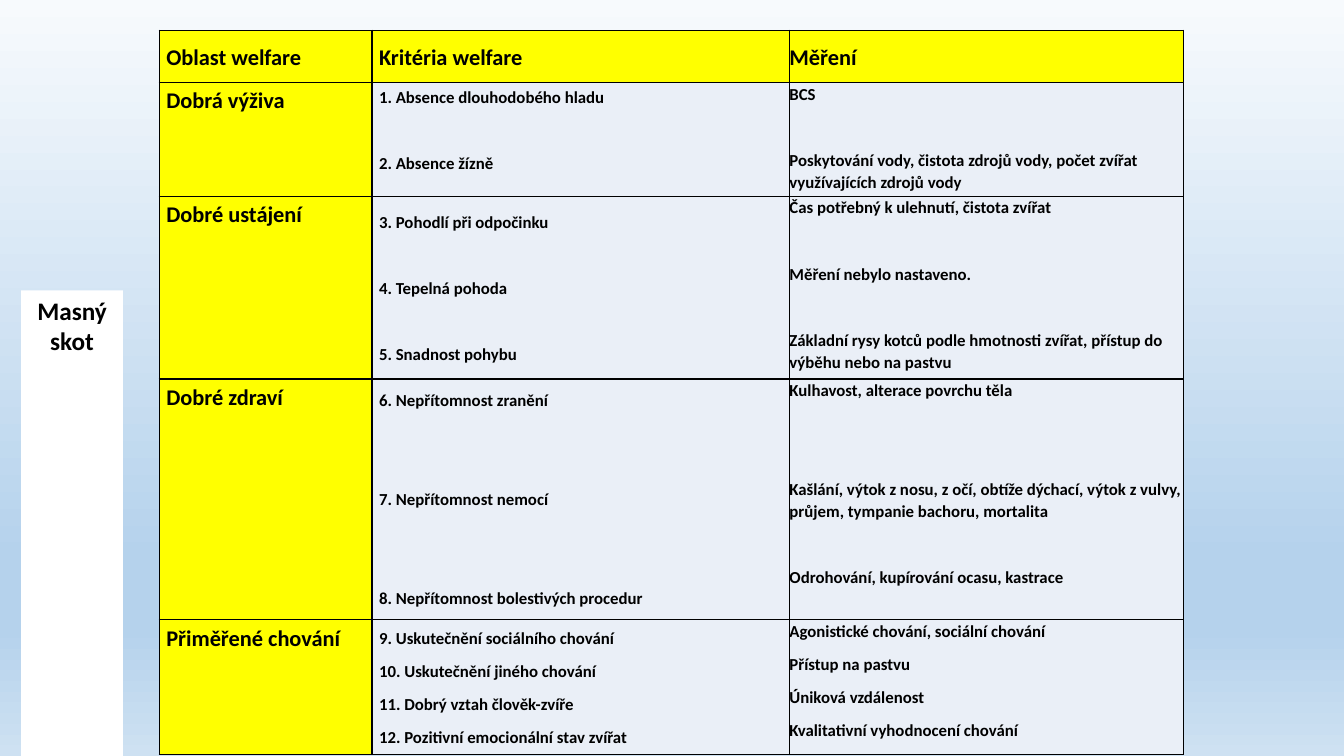
from dataclasses import dataclass

from lxml import etree
from pptx import Presentation
from pptx import util as u
from pptx.dml.color import RGBColor
from pptx.enum import text
from pptx.oxml.ns import qn

FONT = "Calibri"
BLACK = RGBColor(0x00, 0x00, 0x00)
WHITE = RGBColor(0xFF, 0xFF, 0xFF)
YELLOW = RGBColor(0xFF, 0xFF, 0x00)
PALE_BLUE = RGBColor(0xEA, 0xEF, 0xF7)
SKY_TOP = RGBColor(0xF7, 0xFA, 0xFD)
SKY_DEEP = RGBColor(0xB5, 0xD2, 0xEC)
SKY_BOTTOM = RGBColor(0xCE, 0xE1, 0xF2)
SKY = [(0, SKY_TOP), (74, SKY_DEEP), (83, SKY_DEEP), (100, SKY_BOTTOM)]

TOP, MIDDLE = text.MSO_ANCHOR.TOP, text.MSO_ANCHOR.MIDDLE
BASE_GAP = 8  # points after each paragraph
LINE_STEP = 23.6  # points from one 12 pt paragraph to the next
COLUMN_WIDTHS = (2.11, 4.14, 3.91)
HEADER_HEIGHT = 0.52
HEADINGS = ("Oblast welfare", "Kritéria welfare", "Měření")


@dataclass
class Entry:
    wording: str
    skipped_lines: int = 0  # free lines left below the entry


@dataclass
class WelfareArea:
    name: str
    height: float
    criteria: list[Entry]
    measures: list[Entry]
    criteria_anchor: text.MSO_ANCHOR = MIDDLE


AREAS = [
    WelfareArea(
        "Dobrá výživa", 1.13,
        [Entry("1. Absence dlouhodobého hladu", 1), Entry("2. Absence žízně")],
        [Entry("BCS", 1),
         Entry("Poskytování vody, čistota zdrojů vody, počet zvířat využívajících zdrojů vody")],
        TOP,
    ),
    WelfareArea(
        "Dobré ustájení", 1.81,
        [Entry("3. Pohodlí při odpočinku", 1), Entry("4. Tepelná pohoda", 1),
         Entry("5. Snadnost pohybu")],
        [Entry("Čas potřebný k ulehnutí, čistota zvířat", 1),
         Entry("Měření nebylo nastaveno.", 1),
         Entry("Základní rysy kotců podle hmotnosti zvířat, přístup do výběhu nebo na pastvu")],
    ),
    WelfareArea(
        "Dobré zdraví", 2.39,
        [Entry("6. Nepřítomnost zranění", 2), Entry("7. Nepřítomnost nemocí", 2),
         Entry("8. Nepřítomnost bolestivých procedur")],
        [Entry("Kulhavost, alterace povrchu těla", 2),
         Entry("Kašlání, výtok z nosu, z očí, obtíže dýchací, výtok z vulvy, "
               "průjem, tympanie bachoru, mortalita", 1),
         Entry("Odrohování, kupírování ocasu, kastrace")],
    ),
    WelfareArea(
        "Přiměřené chování", 1.34,
        [Entry("9. Uskutečnění sociálního chování"), Entry("10. Uskutečnění jiného chování"),
         Entry("11. Dobrý vztah člověk-zvíře"), Entry("12. Pozitivní emocionální stav zvířat")],
        [Entry("Agonistické chování, sociální chování"), Entry("Přístup na pastvu"),
         Entry("Úniková vzdálenost"), Entry("Kvalitativní vyhodnocení chování")],
    ),
]


def style_font(paragraph, size: int) -> None:
    font = paragraph.font
    font.name, font.size, font.bold = FONT, u.Pt(size), True
    font.color.rgb = BLACK


def paint_background(slide) -> None:
    fill = slide.background.fill
    fill.gradient()
    fill.gradient_angle = 270
    stops = slide.element.find(".//" + qn("a:gsLst"))
    for old_stop in list(stops):
        stops.remove(old_stop)
    for percent, color in SKY:
        stop = etree.SubElement(stops, qn("a:gs"), pos=str(percent * 1000))
        etree.SubElement(stop, qn("a:srgbClr"), val=str(color))


def add_borders(cell) -> None:
    properties = cell._tc.get_or_add_tcPr()
    for side in ("a:lnL", "a:lnR", "a:lnT", "a:lnB"):
        line = etree.SubElement(properties, qn(side), w=str(u.Pt(1)))
        solid = etree.SubElement(line, qn("a:solidFill"))
        etree.SubElement(solid, qn("a:srgbClr"), val=str(BLACK))


def fill_cell(cell, entries: list[Entry], size: int, color: RGBColor,
              anchor: text.MSO_ANCHOR, inset: bool) -> None:
    add_borders(cell)
    cell.fill.solid()
    cell.fill.fore_color.rgb = color
    cell.vertical_anchor = anchor
    cell.margin_left = cell.margin_right = u.Inches(0.07 if inset else 0)
    cell.margin_top = cell.margin_bottom = u.Inches(0.03 if inset else 0)
    frame = cell.text_frame
    frame.text = "\n".join(entry.wording for entry in entries)
    for paragraph, entry in zip(frame.paragraphs, entries):
        paragraph.line_spacing = 1.07
        paragraph.space_after = u.Pt(BASE_GAP + entry.skipped_lines * LINE_STEP)
        style_font(paragraph, size)


def add_title(slide) -> None:
    title = slide.shapes.title
    title.left, title.top = u.Inches(0.21), u.Inches(2.88)
    title.width, title.height = u.Inches(1.01), u.Inches(0.71)
    title.fill.solid()
    title.fill.fore_color.rgb = WHITE
    frame = title.text_frame
    frame.text = "Masný skot"
    frame.word_wrap = True
    frame.auto_size = text.MSO_AUTO_SIZE.SHAPE_TO_FIT_TEXT
    frame.vertical_anchor = TOP
    paragraph = frame.paragraphs[0]
    paragraph.alignment = text.PP_ALIGN.CENTER
    style_font(paragraph, 18)


def add_welfare_table(slide) -> None:
    heights = [HEADER_HEIGHT] + [area.height for area in AREAS]
    table = slide.shapes.add_table(
        len(heights), len(COLUMN_WIDTHS), u.Inches(1.58), u.Inches(0.3),
        u.Inches(sum(COLUMN_WIDTHS)), u.Inches(sum(heights))).table
    table.first_row = table.horz_banding = False
    for column, width in zip(table.columns, COLUMN_WIDTHS):
        column.width = u.Inches(width)
    for row, height in zip(table.rows, heights):
        row.height = u.Inches(height)

    # Header row
    for index, heading in enumerate(HEADINGS):
        fill_cell(table.cell(0, index), [Entry(heading)], 16, YELLOW, MIDDLE, index < 2)

    # One row per welfare area
    for index, area in enumerate(AREAS, start=1):
        fill_cell(table.cell(index, 0), [Entry(area.name)], 16, YELLOW, TOP, True)
        fill_cell(table.cell(index, 1), area.criteria, 12, PALE_BLUE, area.criteria_anchor, True)
        fill_cell(table.cell(index, 2), area.measures, 12, PALE_BLUE, TOP, False)


def main() -> None:
    deck = Presentation()
    deck.slide_width, deck.slide_height = u.Inches(13.33), u.Inches(7.5)
    slide = deck.slides.add_slide(deck.slide_layouts[5])
    paint_background(slide)
    add_title(slide)
    add_welfare_table(slide)
    deck.save("out.pptx")


if __name__ == "__main__":
    main()
